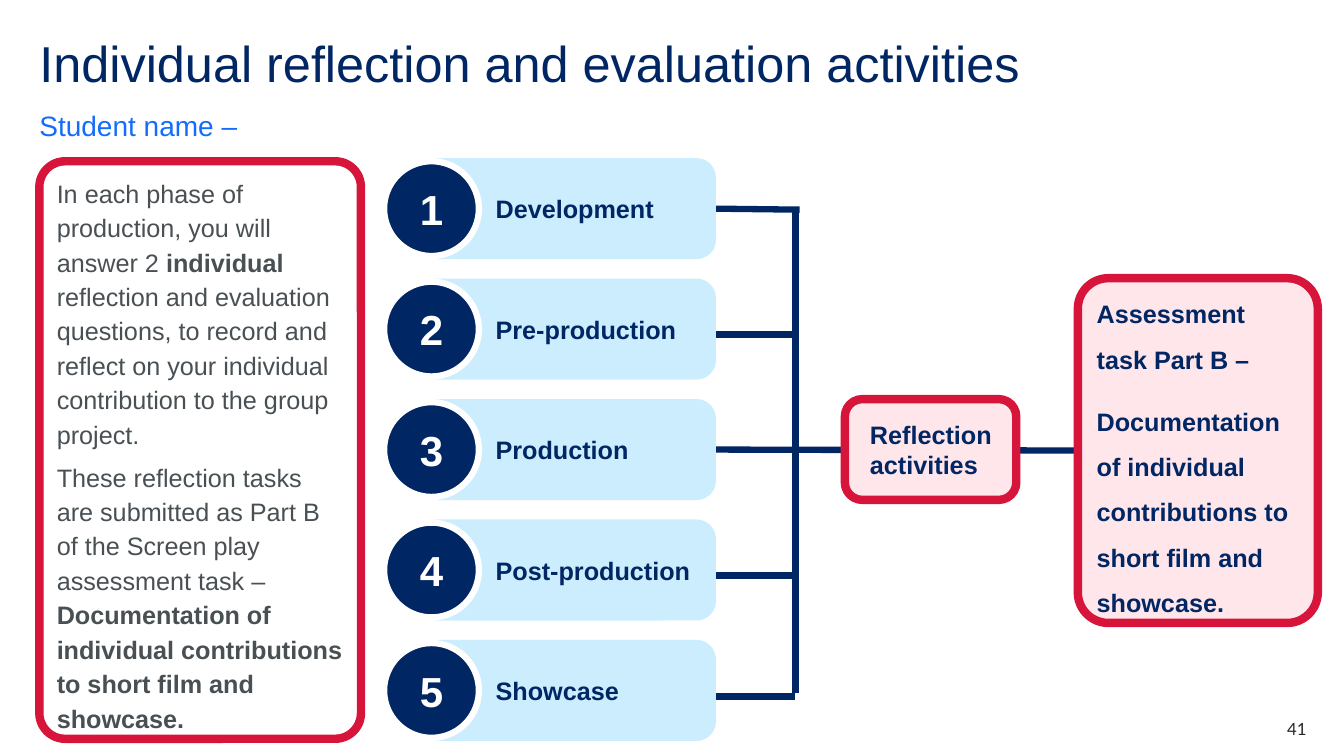
from lxml import etree
from pptx import Presentation
from pptx.dml.color import RGBColor
from pptx.enum.shapes import MSO_CONNECTOR, MSO_SHAPE
from pptx.enum.text import MSO_ANCHOR, MSO_AUTO_SIZE, PP_ALIGN
from pptx.oxml.ns import qn
from pptx.util import Inches, Pt

STRAIGHT = MSO_CONNECTOR.STRAIGHT
ROUNDED, OVAL = MSO_SHAPE.ROUNDED_RECTANGLE, MSO_SHAPE.OVAL
TOP, MIDDLE, BOTTOM = MSO_ANCHOR.TOP, MSO_ANCHOR.MIDDLE, MSO_ANCHOR.BOTTOM
LEFT, CENTER, RIGHT = PP_ALIGN.LEFT, PP_ALIGN.CENTER, PP_ALIGN.RIGHT
NO_AUTOFIT = MSO_AUTO_SIZE.NONE
SIDE_LEFT, SIDE_RIGHT = 1, 3

NAVY = RGBColor(0x00, 0x26, 0x64)
BLUE = RGBColor(0x14, 0x6C, 0xFD)
SKY = RGBColor(0xCB, 0xED, 0xFD)
RED = RGBColor(0xD7, 0x15, 0x3A)
PINK = RGBColor(0xFF, 0xE6, 0xEA)
GREY = RGBColor(0x49, 0x50, 0x54)
INK = RGBColor(0x22, 0x27, 0x2B)
WHITE = RGBColor(0xFF, 0xFF, 0xFF)

# Label and height at which its branch meets the trunk
PHASES = [("Development", 2.08), ("Pre-production", 3.32), ("Production", 4.47),
          ("Post-production", 5.71), ("Showcase", 6.91)]
PHASE_TOP, PHASE_PITCH, PHASE_H = 1.6, 1.195, 0.94
PHASE_LEFT, PHASE_W = 4.18, 2.89
PHASE_RIGHT = PHASE_LEFT + PHASE_W
TRUNK_X, TASK_X = 7.89, 10.69


def write(sp, paragraphs, size=18, color=NAVY, bold=False, font="Arial", align=LEFT,
          anchor=TOP, spacing=1.0, after=0, indent=0, inset=None):
    """Fill a shape; each paragraph is a list of runs, and **text** is a bold run."""
    tf = sp.text_frame
    tf.word_wrap = True
    tf.auto_size = NO_AUTOFIT
    tf.vertical_anchor = anchor
    if inset is not None:
        tf.margin_left = tf.margin_right = tf.margin_top = tf.margin_bottom = Inches(inset)
    for i, runs in enumerate(paragraphs):
        p = tf.paragraphs[0] if i == 0 else tf.add_paragraph()
        p.alignment = align
        p.line_spacing = spacing
        p.space_before, p.space_after = Pt(0), Pt(after)
        pPr = p._p.get_or_add_pPr()
        pPr.set("marL", str(Inches(indent)))
        pPr.set("indent", "0")
        etree.SubElement(pPr, qn("a:buNone"))
        for text in runs:
            r = p.add_run()
            r.text = text.strip("*")
            r.font.name, r.font.size = font, Pt(size)
            r.font.bold = bold or text.startswith("**")
            r.font.color.rgb = color


class Deck:
    def __init__(self):
        self.prs = Presentation()
        self.prs.slide_width, self.prs.slide_height = Inches(13.33), Inches(7.5)
        self.s = self.prs.slides.add_slide(self.prs.slide_layouts[1])

    def placeholder(self, idx, box, text, **style):
        sp = self.s.placeholders[idx]
        sp.left, sp.top, sp.width, sp.height = map(Inches, box)
        write(sp, [[text]], inset=0, **style)

    def text(self, box, text, **style):
        sp = self.s.shapes.add_textbox(*map(Inches, box))
        write(sp, [[text]], inset=0, **style)

    def shape(self, kind, box, paragraphs, line, line_width, fill=None, radius=None, **style):
        sp = self.s.shapes.add_shape(kind, *map(Inches, box))
        sp.shadow.inherit = False
        if radius is not None:
            sp.adjustments[0] = radius
        if fill is None:
            sp.fill.background()
        else:
            sp.fill.solid()
            sp.fill.fore_color.rgb = fill
        sp.line.color.rgb, sp.line.width = line, Pt(line_width)
        write(sp, paragraphs, **style)
        return sp

    def line(self, x1, y1, x2, y2):
        cx = self.s.shapes.add_connector(STRAIGHT, *map(Inches, (x1, y1, x2, y2)))
        cx.line.color.rgb, cx.line.width = NAVY, Pt(4.5)
        etree.SubElement(cx._element.spPr, qn("a:effectLst"))
        return cx

    def phase(self, number, label):
        y = PHASE_TOP + (number - 1) * PHASE_PITCH
        bar = self.shape(ROUNDED, (PHASE_LEFT, y, PHASE_W, PHASE_H), [[label]], SKY, 4.5,
                         fill=SKY, radius=0.173, bold=True, anchor=MIDDLE, indent=0.59)
        self.shape(OVAL, (3.81, y, PHASE_H, PHASE_H), [[str(number)]], WHITE, 4.5, fill=NAVY,
                   size=30, color=WHITE, bold=True, align=CENTER, anchor=MIDDLE)
        return bar


def main():
    deck = Deck()
    deck.placeholder(0, (0.39, 0.39, 12.56, 0.6),
                     "Individual reflection and evaluation activities", size=36, spacing=0.9)
    deck.placeholder(1, (0.39, 1.07, 12.56, 0.34), "Student name –", size=20, color=BLUE,
                     anchor=BOTTOM, spacing=1.5, after=12)

    deck.shape(ROUNDED, (0.39, 1.6, 3.19, 5.73), [
        ["In each phase of production, you will answer 2 ", "**individual**",
         " reflection and evaluation questions, to record and reflect on your individual "
         "contribution to the group project."],
        ["These reflection tasks are submitted as Part B of the Screen play assessment task – ",
         "**Documentation of individual contributions to short film and showcase.**"],
    ], RED, 6, radius=0.08, color=GREY, spacing=1.14, after=6)

    # Lines come first so that they lie behind the boxes they join
    ends = {"Development": 7.93, "Production": TASK_X}
    branches = {label: deck.line(PHASE_RIGHT, y, ends.get(label, TRUNK_X), y)
                for label, y in PHASES}
    deck.line(TRUNK_X, 2.08, TRUNK_X, 6.88)

    bars = {label: deck.phase(n, label) for n, (label, _) in enumerate(PHASES, 1)}
    deck.shape(ROUNDED, (8.38, 3.96, 1.7, 1), [["Reflection activities"]], RED, 6, fill=PINK,
               radius=0.173, bold=True, anchor=MIDDLE, indent=0.1)
    task = deck.shape(ROUNDED, (TASK_X, 2.76, 2.38, 3.42), [
        ["Assessment task Part B –"],
        ["Documentation of individual contributions to short film and showcase."],
    ], RED, 6, fill=PINK, radius=0.127, bold=True, anchor=MIDDLE, spacing=1.5, after=12)

    for label in ends:
        branches[label].begin_connect(bars[label], SIDE_RIGHT)
    branches["Production"].end_connect(task, SIDE_LEFT)

    deck.text((12.17, 7.13, 0.79, 0.2), "41", size=12, color=INK, font="Lato", align=RIGHT)
    deck.prs.save("out.pptx")


if __name__ == "__main__":
    main()
